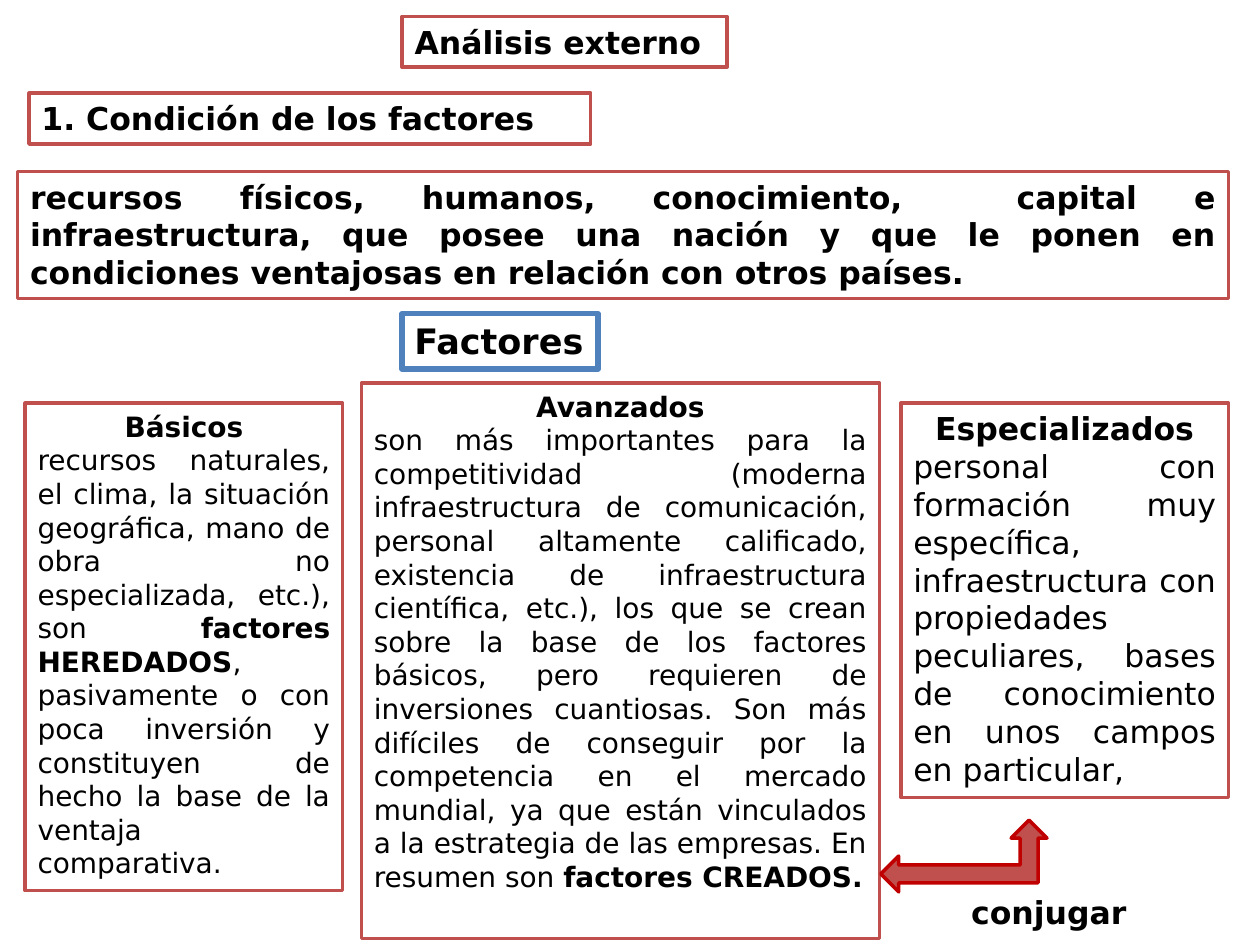
from pptx import Presentation
from pptx.dml.color import RGBColor
from pptx.enum.shapes import MSO_SHAPE
from pptx.enum.text import MSO_ANCHOR, MSO_AUTO_SIZE, PP_ALIGN
from pptx.util import Pt

LEFT, CENTER, JUSTIFY = PP_ALIGN.LEFT, PP_ALIGN.CENTER, PP_ALIGN.JUSTIFY
TOP = MSO_ANCHOR.TOP
FIXED_SIZE = MSO_AUTO_SIZE.NONE
RECTANGLE = MSO_SHAPE.RECTANGLE
LEFT_UP_ARROW = MSO_SHAPE.LEFT_UP_ARROW

FONT = "DejaVu Sans"
BLACK, WHITE = "000000", "FFFFFF"
RED, DARK_RED, BLUE = "C0504D", "C00000", "4F81BD"
TITLE_ONLY_LAYOUT = 5

# Heading, body runs as (text, bold), text size, box (left, top, width, height)
FACTORS = [
    ("Básicos",
     [("recursos naturales, el clima, la situación geográfica, mano de obra "
       "no especializada, etc.), son ", False),
      ("factores HEREDADOS", True),
      (", pasivamente o con poca inversión y constituyen de hecho la base "
       "de la ventaja comparativa.", False)],
     16, (14.4, 230.4, 181.4, 278.6)),
    ("Avanzados",
     [("son más importantes para la competitividad (moderna infraestructura "
       "de comunicación, personal altamente calificado, existencia de "
       "infraestructura científica, etc.), los que se crean sobre la base de "
       "los factores básicos, pero requieren de inversiones cuantiosas. Son "
       "más difíciles de conseguir por la competencia en el mercado mundial, "
       "ya que están vinculados a la estrategia de las empresas. En resumen "
       "son ", False),
      ("factores CREADOS.", True)],
     16, (206.6, 218.9, 296, 317.5)),
    ("Especializados",
     [("personal con formación muy específica, infraestructura con "
       "propiedades peculiares, bases de conocimiento en unos campos en "
       "particular,", False)],
     18, (514.8, 230.4, 187.2, 225.4)),
]


def color(hex_value):
    return RGBColor.from_string(hex_value)


def place(shape, box):
    shape.left, shape.top, shape.width, shape.height = map(Pt, box)


def paint(shape, fill, line, line_width):
    shape.fill.solid()
    shape.fill.fore_color.rgb = color(fill)
    shape.line.color.rgb = color(line)
    shape.line.width = Pt(line_width)


def add_filled_shape(slide, kind, box, fill, line, line_width=2):
    shape = slide.shapes.add_shape(kind, *map(Pt, box))
    shape.shadow.inherit = False
    paint(shape, fill, line, line_width)
    return shape


def prepare_text(shape):
    text_frame = shape.text_frame
    text_frame.word_wrap = True
    text_frame.auto_size = FIXED_SIZE
    text_frame.vertical_anchor = TOP
    return text_frame


def write_runs(paragraph, runs, size, alignment):
    paragraph.alignment = alignment
    for text, bold in runs:
        run = paragraph.add_run()
        run.text = text
        run.font.name = FONT
        run.font.size = Pt(size)
        run.font.bold = bold
        run.font.color.rgb = color(BLACK)


def write_label(shape, text, size=18, alignment=LEFT):
    paragraph = prepare_text(shape).paragraphs[0]
    write_runs(paragraph, [(text, True)], size, alignment)


def add_title(slide, text, box):
    title = slide.shapes.title
    place(title, box)
    paint(title, WHITE, RED, 2)
    write_label(title, text)


def add_label_box(slide, text, box, size=18, alignment=LEFT, line=RED, line_width=2):
    shape = add_filled_shape(slide, RECTANGLE, box, WHITE, line, line_width)
    write_label(shape, text, size, alignment)


def add_factor_box(slide, heading, body, size, box):
    shape = add_filled_shape(slide, RECTANGLE, box, WHITE, RED)
    text_frame = prepare_text(shape)
    write_runs(text_frame.paragraphs[0], [(heading, True)], size, CENTER)
    write_runs(text_frame.add_paragraph(), body, size, JUSTIFY)


def main():
    presentation = Presentation()
    presentation.slide_width, presentation.slide_height = Pt(720), Pt(540)
    slide = presentation.slides.add_slide(
        presentation.slide_layouts[TITLE_ONLY_LAYOUT])

    add_title(slide, "Análisis externo", (229.7, 9.4, 185.8, 29))
    add_label_box(
        slide,
        "recursos físicos, humanos, conocimiento,  capital e infraestructura, "
        "que posee una nación y que le ponen en condiciones ventajosas en "
        "relación con otros países.",
        (10.1, 98, 692, 72.7), alignment=JUSTIFY)
    add_label_box(slide, "1. Condición de los factores", (16.6, 53.3, 321, 29))
    add_label_box(slide, "Factores", (229.7, 179.3, 112, 31.7),
                  size=20, line=BLUE, line_width=3)

    for factor in FACTORS:
        add_factor_box(slide, *factor)

    add_filled_shape(slide, LEFT_UP_ARROW, (503.3, 468.7, 95, 41), RED, DARK_RED)
    caption = slide.shapes.add_textbox(*map(Pt, (547.9, 506.9, 110.9, 29)))
    write_label(caption, "conjugar")

    presentation.save("out.pptx")


if __name__ == "__main__":
    main()
